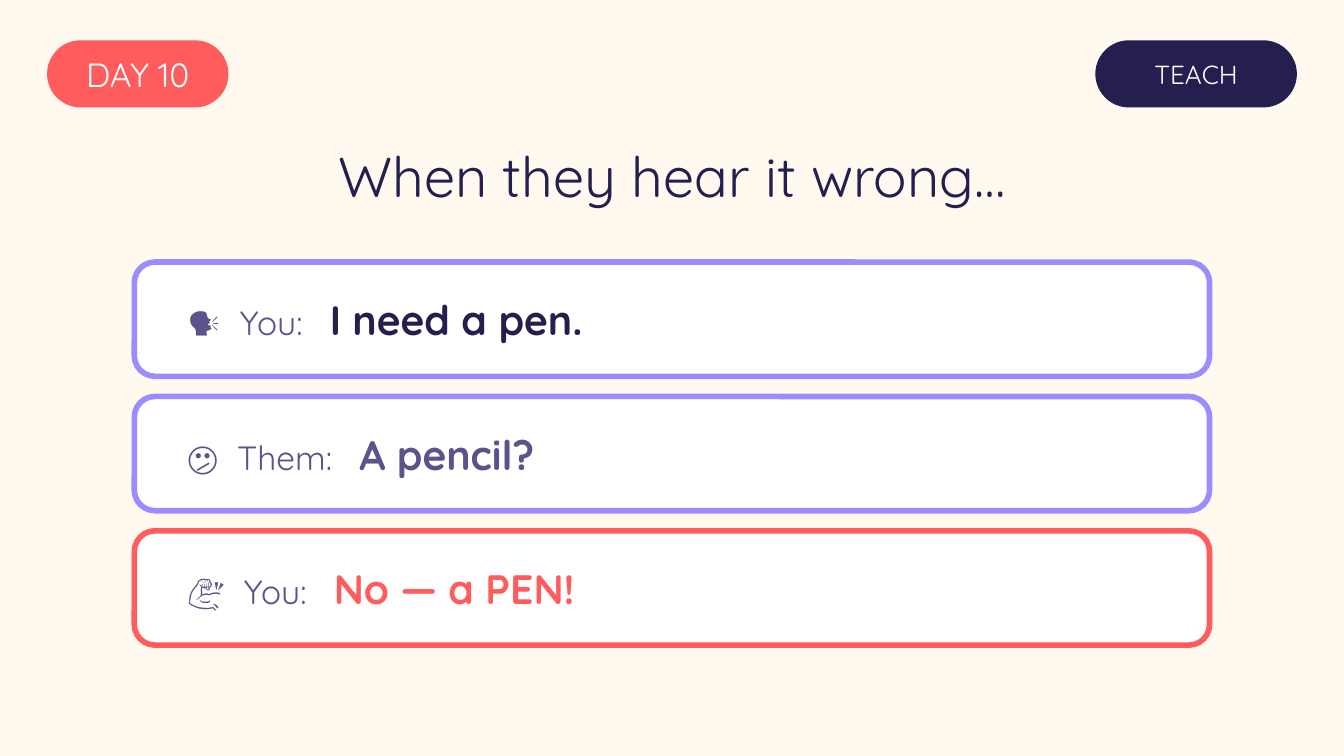
from lxml.etree import SubElement
from pptx import Presentation
from pptx.dml.color import RGBColor
from pptx.enum.shapes import MSO_SHAPE
from pptx.enum.text import MSO_ANCHOR, MSO_AUTO_SIZE, PP_ALIGN
from pptx.oxml.ns import qn
from pptx.util import Inches, Pt

NAVY, CORAL, VIOLET, MUTED, WHITE = "241F4E", "FF5D5D", "9B8CFF", "5A548A", "FFFFFF"


def color(hex_value):
    return RGBColor.from_string(hex_value)


def style(run, size, hex_value, bold=False):
    run.font.name = "Quicksand"
    run.font.size = Pt(size)
    run.font.bold = bold
    run.font.color.rgb = color(hex_value)


# Widescreen slide, 16:9
presentation = Presentation()
presentation.slide_width = Inches(10)
presentation.slide_height = Inches(10) * 9 // 16
slide = presentation.slides.add_slide(presentation.slide_layouts[5])
slide.background.fill.solid()
slide.background.fill.fore_color.rgb = color("FFF9EF")

# Title
title = slide.shapes.title
title.left, title.top = Inches(0), Inches(0.95)
title.width, title.height = Inches(10), Inches(0.7)
frame = title.text_frame
frame.text = "When they hear it wrong…"
frame.auto_size = MSO_AUTO_SIZE.NONE
frame.vertical_anchor = MSO_ANCHOR.MIDDLE
frame.paragraphs[0].alignment = PP_ALIGN.CENTER
style(frame.paragraphs[0].runs[0], 30, NAVY)

# Day and stage pills
pills = [("DAY 10", 0.35, 1.35, 18, CORAL), ("TEACH", 8.15, 1.5, 14, NAVY)]
for text, left, width, size, fill in pills:
    pill = slide.shapes.add_shape(
        MSO_SHAPE.ROUNDED_RECTANGLE, Inches(left), Inches(0.3), Inches(width), Inches(0.5))
    pill.adjustments[0] = 0.5
    pill.shadow.inherit = False
    pill.fill.solid()
    pill.fill.fore_color.rgb = color(fill)
    pill.line.fill.background()
    frame = pill.text_frame
    frame.margin_left = frame.margin_right = frame.margin_top = frame.margin_bottom = 0
    frame.vertical_anchor = MSO_ANCHOR.MIDDLE
    frame.text = text
    frame.paragraphs[0].alignment = PP_ALIGN.CENTER
    style(frame.paragraphs[0].runs[0], size, WHITE)

# Dialogue cards: icon, speaker, phrase, tab stops, border and phrase colours
cards = [
    ("🗣️", "You:", "I need a pen.", (0.39, 1.06), VIOLET, NAVY),
    ("😕", "Them:", "A pencil?", (0.37, 1.28), VIOLET, MUTED),
    ("💪", "You:", "No — a PEN!", (0.42, 1.09), CORAL, CORAL),
]
for index, (icon, speaker, phrase, stops, border, phrase_color) in enumerate(cards):
    card = slide.shapes.add_shape(
        MSO_SHAPE.ROUNDED_RECTANGLE, Inches(1), Inches(1.95 + index), Inches(8), Inches(0.85))
    card.adjustments[0] = 0.18
    card.shadow.inherit = False
    card.fill.solid()
    card.fill.fore_color.rgb = color(WHITE)
    card.line.color.rgb = color(border)
    card.line.width = Pt(3)
    frame = card.text_frame
    frame.margin_left = Inches(0.35)
    frame.vertical_anchor = MSO_ANCHOR.MIDDLE
    paragraph = frame.paragraphs[0]
    paragraph.alignment = PP_ALIGN.LEFT
    tabs = SubElement(paragraph._p.get_or_add_pPr(), qn("a:tabLst"))
    for stop in stops:
        SubElement(tabs, qn("a:tab"), pos=str(Inches(stop)), algn="l")
    for text, size, text_color, bold in [
        (f"{icon}\t{speaker}\t", 18, MUTED, False),
        (phrase, 22, phrase_color, True),
    ]:
        run = paragraph.add_run()
        run.text = text
        style(run, size, text_color, bold)

presentation.save("out.pptx")
